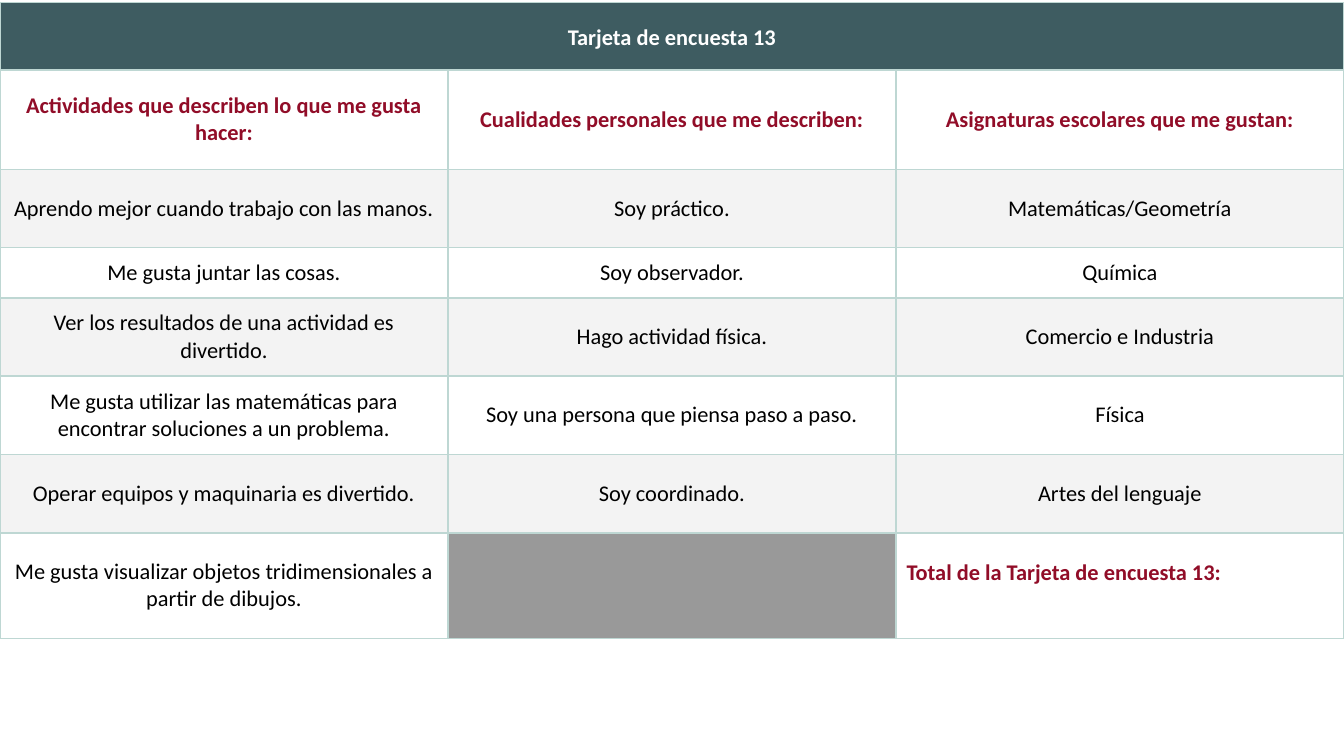
import dataclasses

import pptx
import pptx.dml.color
import pptx.enum.text
import pptx.oxml
import pptx.oxml.ns
import pptx.util
from pptx.util import Cm


@dataclasses.dataclass(frozen=True)
class Theme:
    font: str = "Calibri"
    size: int = 12
    border_width: int = 1
    white: str = "FFFFFF"
    black: str = "000000"
    teal: str = "3E5C61"
    crimson: str = "910D28"
    band: str = "F3F3F3"
    blocked: str = "999999"
    border: str = "BED7D3"


THEME = Theme()
CENTER = pptx.enum.text.PP_ALIGN.CENTER
LEFT = pptx.enum.text.PP_ALIGN.LEFT

PAGE_WIDTH, PAGE_HEIGHT = 25.4, 14.29
ROW_HEIGHTS = [1.27, 1.88, 1.48, 0.95, 1.48, 1.48, 1.48, 2.0]

TITLE = "Tarjeta de encuesta 13"
HEADINGS = [
    "Actividades que describen lo que me gusta hacer:",
    "Cualidades personales que me describen:",
    "Asignaturas escolares que me gustan:",
]
ANSWERS = [
    ["Aprendo mejor cuando trabajo con las manos.", "Soy práctico.", "Matemáticas/Geometría"],
    ["Me gusta juntar las cosas.", "Soy observador.", "Química"],
    ["Ver los resultados de una actividad es divertido.", "Hago actividad física.",
     "Comercio e Industria"],
    ["Me gusta utilizar las matemáticas para encontrar soluciones a un problema.",
     "Soy una persona que piensa paso a paso.", "Física"],
    ["Operar equipos y maquinaria es divertido.", "Soy coordinado.", "Artes del lenguaje"],
]
LAST_ACTIVITY = "Me gusta visualizar objetos tridimensionales a partir de dibujos."
TOTAL = "Total de la Tarjeta de encuesta 13:"


def color(code):
    return pptx.dml.color.RGBColor.from_string(code)


def add_borders(cell):
    properties = cell._tc.get_or_add_tcPr()
    width = pptx.util.Pt(THEME.border_width)
    for side in ("lnL", "lnR", "lnT", "lnB"):
        properties.append(pptx.oxml.parse_xml(
            f'<a:{side} {pptx.oxml.ns.nsdecls("a")} w="{width}"><a:solidFill>'
            f'<a:srgbClr val="{THEME.border}"/></a:solidFill></a:{side}>'))


def style_cell(cell, fill):
    add_borders(cell)
    cell.fill.solid()
    cell.fill.fore_color.rgb = color(fill)
    cell.vertical_anchor = pptx.enum.text.MSO_ANCHOR.MIDDLE
    cell.margin_left = cell.margin_right = Cm(0.2)
    cell.margin_top = cell.margin_bottom = Cm(0.2)


def write(cell, text, ink=THEME.black, bold=False, align=CENTER):
    para = cell.text_frame.paragraphs[0]
    para.text = text
    para.alignment = align
    para.font.name = THEME.font
    para.font.size = pptx.util.Pt(THEME.size)
    para.font.bold = bold
    para.font.color.rgb = color(ink)
    return para


def add_survey_card(page, left, top, width, row_heights):
    column_count = len(HEADINGS)
    frame = page.shapes.add_table(len(row_heights), column_count, Cm(left), Cm(top),
                                  Cm(width), Cm(sum(row_heights)))
    table = frame.table
    table.first_row = table.horz_banding = False
    for column in table.columns:
        column.width = Cm(width / column_count)
    for row, height in zip(table.rows, row_heights):
        row.height = Cm(height)

    # Cell fills: title, headings, then alternating bands
    for index, row in enumerate(table.rows):
        banded = index >= 2 and index % 2 == 0
        fill = THEME.teal if index == 0 else THEME.band if banded else THEME.white
        for cell in row.cells:
            style_cell(cell, fill)

    # Title across all columns
    table.cell(0, 0).merge(table.cell(0, column_count - 1))
    title = write(table.cell(0, 0), TITLE, THEME.white, bold=True)
    title.line_spacing = 1.15
    title.space_after = pptx.util.Pt(6)

    # Column headings
    for column, heading in enumerate(HEADINGS):
        para = write(table.cell(1, column), heading, THEME.crimson, bold=True)
        para.space_before = pptx.util.Pt(10)

    # Answers
    for row, answers in enumerate(ANSWERS, start=2):
        for column, answer in enumerate(answers):
            write(table.cell(row, column), answer)

    # Closing row: last activity, blocked cell, total
    activity, blocked, total = table.rows[len(row_heights) - 1].cells
    write(activity, LAST_ACTIVITY)
    blocked.fill.fore_color.rgb = color(THEME.blocked)
    para = write(total, TOTAL, THEME.crimson, bold=True, align=LEFT)
    para.space_before = pptx.util.Pt(10)
    total.margin_bottom = Cm(0.7)


def main():
    deck = pptx.Presentation()
    deck.slide_width, deck.slide_height = Cm(PAGE_WIDTH), Cm(PAGE_HEIGHT)
    page = deck.slides.add_slide(deck.slide_layouts[6])
    add_survey_card(page, 0, 0.05, PAGE_WIDTH, ROW_HEIGHTS)
    deck.save("out.pptx")


if __name__ == "__main__":
    main()
